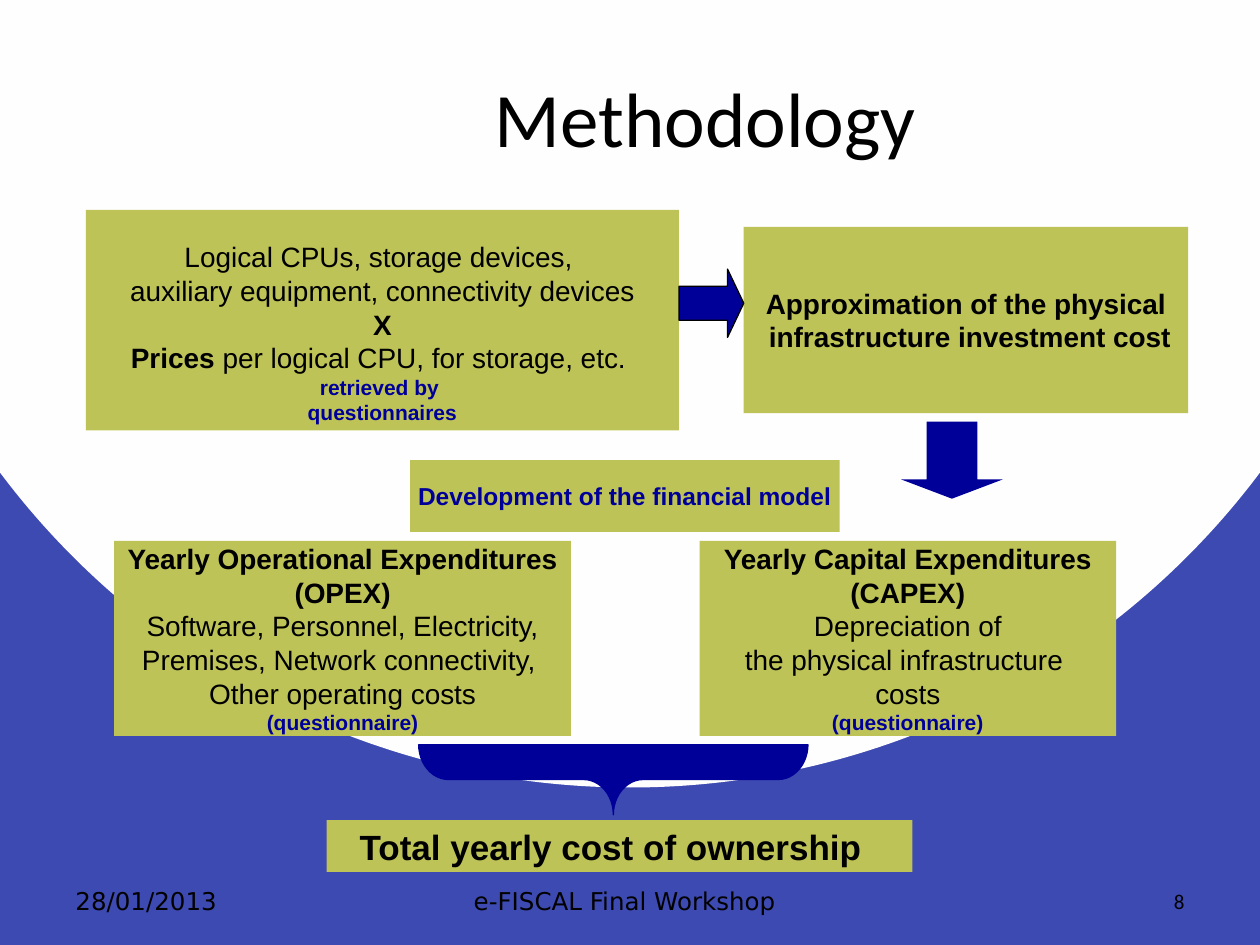
from pptx import Presentation
from pptx.dml.color import RGBColor
from pptx.enum.shapes import MSO_SHAPE as Shape
from pptx.enum.text import MSO_ANCHOR as Anchor, PP_ALIGN as Align
from pptx.oxml import parse_xml
from pptx.oxml.ns import nsdecls, qn
from pptx.util import Pt

BLACK = RGBColor(0x00, 0x00, 0x00)
NAVY = RGBColor(0x00, 0x00, 0x99)
OLIVE = RGBColor(0xBE, 0xC3, 0x57)
WHITE = RGBColor(0xFF, 0xFF, 0xFF)
OFF_WHITE = RGBColor(0xFE, 0xFE, 0xFE)
BLUE = RGBColor(0x3D, 0x4A, 0xB2)

# Run styles: size, bold, colour
PLAIN = (16, False, BLACK)
STRONG = (16, True, BLACK)
SOURCE = (12, True, NAVY)
MODEL = (14, True, NAVY)
TOTAL = (20, True, BLACK)


def add_run(paragraph, text, style, font="Arial"):
    run = paragraph.add_run()
    run.text = text
    run.font.name = font
    size, run.font.bold, run.font.color.rgb = style
    run.font.size = Pt(size)


def paint_background(slide):
    """Radial gradient with a hard edge between white and blue."""
    slide.background.fill.solid()
    solid = next(slide.element.iter(qn("a:solidFill")))
    stops = "".join(
        f'<a:gs pos="{pos}"><a:srgbClr val="{color}"/></a:gs>'
        for pos, color in ((0, WHITE), (100000, OFF_WHITE), (100000, BLUE)))
    gradient = parse_xml(
        f'<a:gradFill {nsdecls("a")} rotWithShape="1"><a:gsLst>{stops}</a:gsLst>'
        '<a:path path="circle"><a:fillToRect l="50000" t="-80000" r="50000" b="180000"/>'
        '</a:path></a:gradFill>')
    solid.getparent().replace(solid, gradient)


def add_label(slide, box, text, size, align, font):
    label = slide.shapes.add_textbox(*map(Pt, box))
    frame = label.text_frame
    frame.word_wrap = True
    frame.vertical_anchor = Anchor.MIDDLE
    frame.paragraphs[0].alignment = align
    add_run(frame.paragraphs[0], text, (size, False, BLACK), font)


def add_step(slide, box, lines, top_inset=3.6, right_inset=7.2):
    """Olive box; each line is a list of (text, style) runs."""
    step = slide.shapes.add_shape(Shape.RECTANGLE, *map(Pt, box))
    step.shadow.inherit = False
    step.fill.solid()
    step.fill.fore_color.rgb = OLIVE
    step.line.fill.background()
    frame = step.text_frame
    frame.word_wrap = False
    frame.vertical_anchor = Anchor.MIDDLE
    frame.margin_top, frame.margin_right = Pt(top_inset), Pt(right_inset)
    for index, runs in enumerate(lines):
        paragraph = frame.add_paragraph() if index else frame.paragraphs[0]
        paragraph.alignment = Align.CENTER
        for text, style in runs:
            add_run(paragraph, text, style)


def add_pointer(slide, kind, box, adjustments, outline=None, rotation=0):
    pointer = slide.shapes.add_shape(kind, *map(Pt, box))
    pointer.shadow.inherit = False
    pointer.rotation = rotation
    for index, value in enumerate(adjustments):
        pointer.adjustments[index] = value
    pointer.fill.solid()
    pointer.fill.fore_color.rgb = NAVY
    if outline is None:
        pointer.line.fill.background()
    else:
        pointer.line.color.rgb = outline
        pointer.line.width = Pt(0.75)


def add_investment(slide, left, top):
    """Inputs and prices leading to the investment cost."""
    add_step(slide, (left, top, 339, 126), [
        [("Logical CPUs, storage devices, ", PLAIN)],
        [("auxiliary equipment, connectivity devices", PLAIN)],
        [("X", STRONG)],
        [("Prices ", STRONG), ("per logical CPU, for storage, etc. ", PLAIN)],
        [("retrieved by ", SOURCE)],
        [("questionnaires", SOURCE)],
    ], top_inset=17.4)
    add_step(slide, (left + 376, top + 9.6, 254, 106.5), [
        [("Approximation of the physical", STRONG)],
        [(" infrastructure investment cost", STRONG)],
    ])
    add_pointer(slide, Shape.RIGHT_ARROW, (left + 339, top + 33.8, 37, 39),
                (0.5, 0.25), BLACK)
    add_pointer(slide, Shape.DOWN_ARROW, (left + 466, top + 121, 58, 44), (0.5, 0.25))


def add_financial_model(slide, left, top):
    """Operating and capital costs merging into the total."""
    add_step(slide, (left + 169, top, 245.5, 41),
             [[("Development of the financial model", MODEL)]])
    expenditures = (
        (0, 261, "Yearly Operational Expenditures", "(OPEX)",
         ("Software, Personnel, Electricity,", "Premises, Network connectivity, ",
          "Other operating costs")),
        (334.5, 238, "Yearly Capital Expenditures", "(CAPEX)",
         ("Depreciation of", "the physical infrastructure ", "costs")),
    )
    for offset, width, heading, short_name, details in expenditures:
        add_step(slide, (left + offset, top + 46, width, 111.5), [
            [(heading, STRONG)],
            [(short_name, STRONG)],
            *[[(detail, PLAIN)] for detail in details],
            [("(questionnaire)", SOURCE)],
        ])
    # The brace is rotated, so its box is given upright
    add_pointer(slide, Shape.RIGHT_BRACE, (left + 265, top + 71.2, 40.3, 222.5),
                (0.423, 0.5), NAVY, rotation=90)
    add_step(slide, (left + 121.3, top + 205.7, 334.8, 29.5),
             [[("Total yearly cost of ownership", TOTAL)]], right_inset=17.2)


def add_footer(slide, left, top, height):
    add_label(slide, (left, top, 168, height), "28/01/2013", 14, Align.LEFT, "DejaVu Sans")
    add_label(slide, (left + 188, top, 266, height), "e-FISCAL Final Workshop", 14,
              Align.CENTER, "DejaVu Sans")
    add_label(slide, (left + 480, top, 168, height), "8", 12, Align.RIGHT, "Calibri")


def main():
    deck = Presentation()
    deck.slide_width, deck.slide_height = Pt(720), Pt(540)
    slide = deck.slides.add_slide(deck.slide_layouts[6])
    paint_background(slide)
    add_label(slide, (122.4, 21.6, 561.6, 90), "Methodology", 44, Align.CENTER, "Calibri")
    add_investment(slide, 49, 120)
    add_financial_model(slide, 65.3, 263)
    add_footer(slide, 36, 500.5, 28.8)
    deck.save("out.pptx")


if __name__ == "__main__":
    main()
